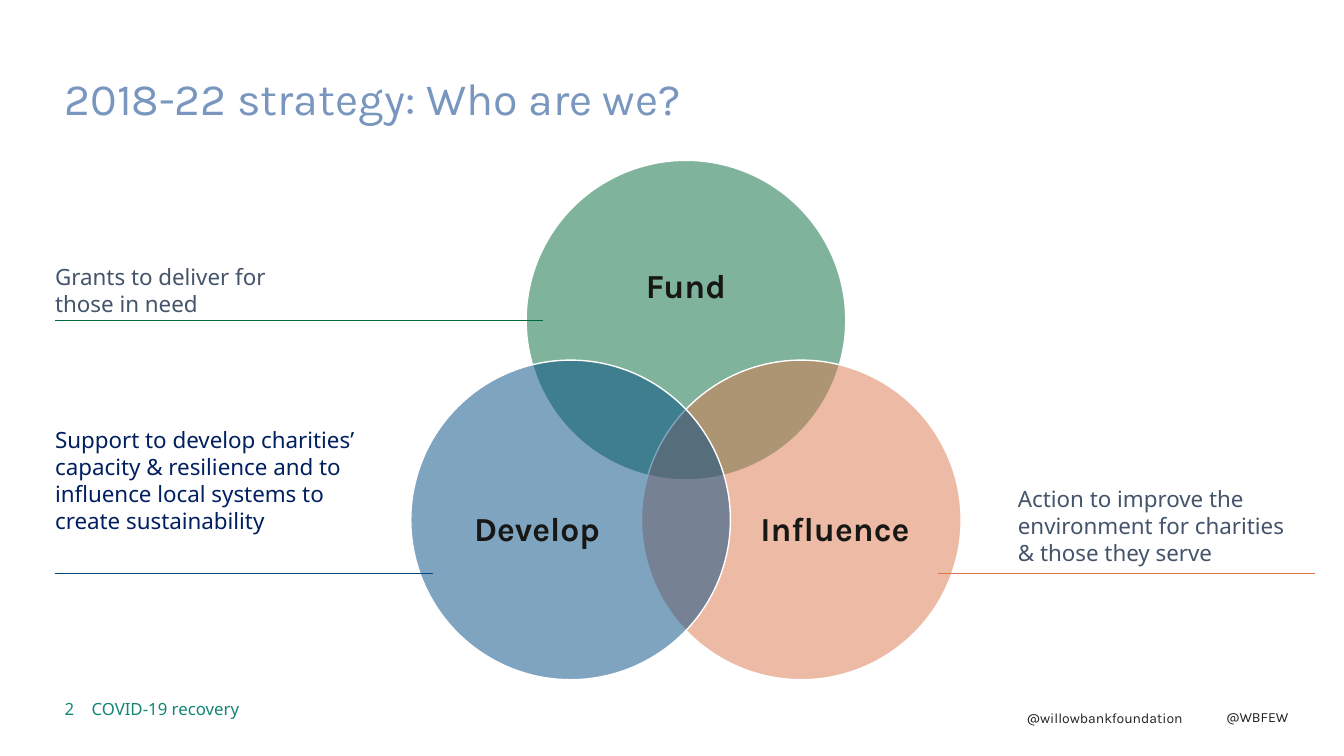
from pptx import Presentation
from pptx.dml.color import RGBColor
from pptx.enum.shapes import MSO_CONNECTOR as Connector, MSO_SHAPE as Shape
from pptx.enum.text import MSO_ANCHOR as Anchor, PP_ALIGN as Align
from pptx.oxml.ns import qn
from pptx.util import Pt
from lxml.etree import SubElement

COLORS = {
    "title": "7996BE", "footer": "128676", "handle": "232020",
    "label": "171715", "slate": "44546A", "navy": "002060", "white": "FFFFFF",
    "fund": "016839", "influence": "DC764C", "develop": "004A83",
}
DIAMETER = 228.3
FUND_X, FUND_Y = 490, 228.7      # centre of the top circle
STEP_X, STEP_Y = 82.4, 142.7     # from the top circle to the lower ones
LOWER_LINE_Y = 409.5


def rgb(name):
    return RGBColor.from_string(COLORS[name])


def write(frame, text, size=16, color="slate", font="Noto Sans", bold=False,
          align=Align.LEFT, spacing=1.0, tab=None):
    frame.word_wrap = True
    paragraph = frame.paragraphs[0]
    paragraph.text = text
    paragraph.alignment = align
    paragraph.line_spacing = spacing
    if tab:
        stops = SubElement(paragraph._p.get_or_add_pPr(), qn("a:tabLst"))
        SubElement(stops, qn("a:tab"), pos=str(Pt(tab)), algn="l")
    for run in paragraph.runs:
        run.font.size = Pt(size)
        run.font.name = font
        run.font.bold = bold
        run.font.color.rgb = rgb(color)


def add_text(slide, box, text, **style):
    textbox = slide.shapes.add_textbox(*map(Pt, box))
    write(textbox.text_frame, text, **style)


def add_circle(slide, text, color, center, left=0, top=0, right=0, bottom=0):
    x, y = center
    circle = slide.shapes.add_shape(
        Shape.OVAL, Pt(x - DIAMETER / 2), Pt(y - DIAMETER / 2),
        Pt(DIAMETER), Pt(DIAMETER))
    circle.shadow.inherit = False
    circle.fill.solid()
    circle.fill.fore_color.rgb = rgb(color)
    tint = circle.fill._xPr.find(qn("a:solidFill"))[0]
    SubElement(tint, qn("a:alpha"), val="50000")
    circle.line.color.rgb = rgb("white")
    circle.line.width = Pt(1)

    # Margins push the label away from the overlaps
    frame = circle.text_frame
    frame.margin_left, frame.margin_right = Pt(left), Pt(right)
    frame.margin_top, frame.margin_bottom = Pt(top), Pt(bottom)
    frame.vertical_anchor = Anchor.MIDDLE
    write(frame, text, size=24, color="label", font="Karla", bold=True,
          align=Align.CENTER, spacing=0.9)


def add_rule(slide, start, end, y, color):
    rule = slide.shapes.add_connector(
        Connector.STRAIGHT, Pt(start), Pt(y), Pt(end), Pt(y))
    rule.line.color.rgb = rgb(color)
    rule.line.width = Pt(0.5)
    SubElement(rule._element.spPr, qn("a:effectLst"))


def main():
    deck = Presentation()
    deck.slide_width, deck.slide_height = Pt(960), Pt(540)
    slide = deck.slides.add_slide(deck.slide_layouts[6])

    # Social handles
    handle = dict(size=10, color="handle", font="Karla", spacing=0.5)
    add_text(slide, (869, 507.6, 86, 14.4), "@WBFEW", **handle)
    add_text(slide, (726.5, 508.3, 129, 14.4), "@willowbankfoundation", **handle)

    # Title and footer
    add_text(slide, (39, 51, 502.5, 52), "2018-22 strategy: Who are we?",
             size=32, color="title", font="Karla", spacing=0.9)
    add_text(slide, (39, 497.5, 350, 19.5), "2\tCOVID-19 recovery",
             size=12, color="footer", spacing=0.9, tab=19.3)

    # Three overlapping circles
    lower_y = FUND_Y + STEP_Y
    add_circle(slide, "Fund", "fund", (FUND_X, FUND_Y), bottom=46)
    add_circle(slide, "Influence", "influence", (FUND_X + STEP_X, lower_y),
               left=48, top=15)
    add_circle(slide, "Develop", "develop", (FUND_X - STEP_X, lower_y),
               right=48, top=15)

    # Rules from the circles to their explanations
    add_rule(slide, 39, 309.5, LOWER_LINE_Y, "develop")
    add_rule(slide, 39, 388, FUND_Y, "fund")
    add_rule(slide, 939, 670.3, LOWER_LINE_Y, "influence")

    # Explanations
    add_text(slide, (32.3, 184.3, 337, 46), "Grants to deliver for \vthose in need")
    add_text(slide, (32.3, 301, 241, 104.4),
             "Support to develop charities’ capacity & resilience and to "
             "influence local systems to create sustainability", color="navy")
    add_text(slide, (720, 343, 219, 65.5),
             "Action to improve the environment for charities & those they serve")

    deck.save("out.pptx")


if __name__ == "__main__":
    main()
